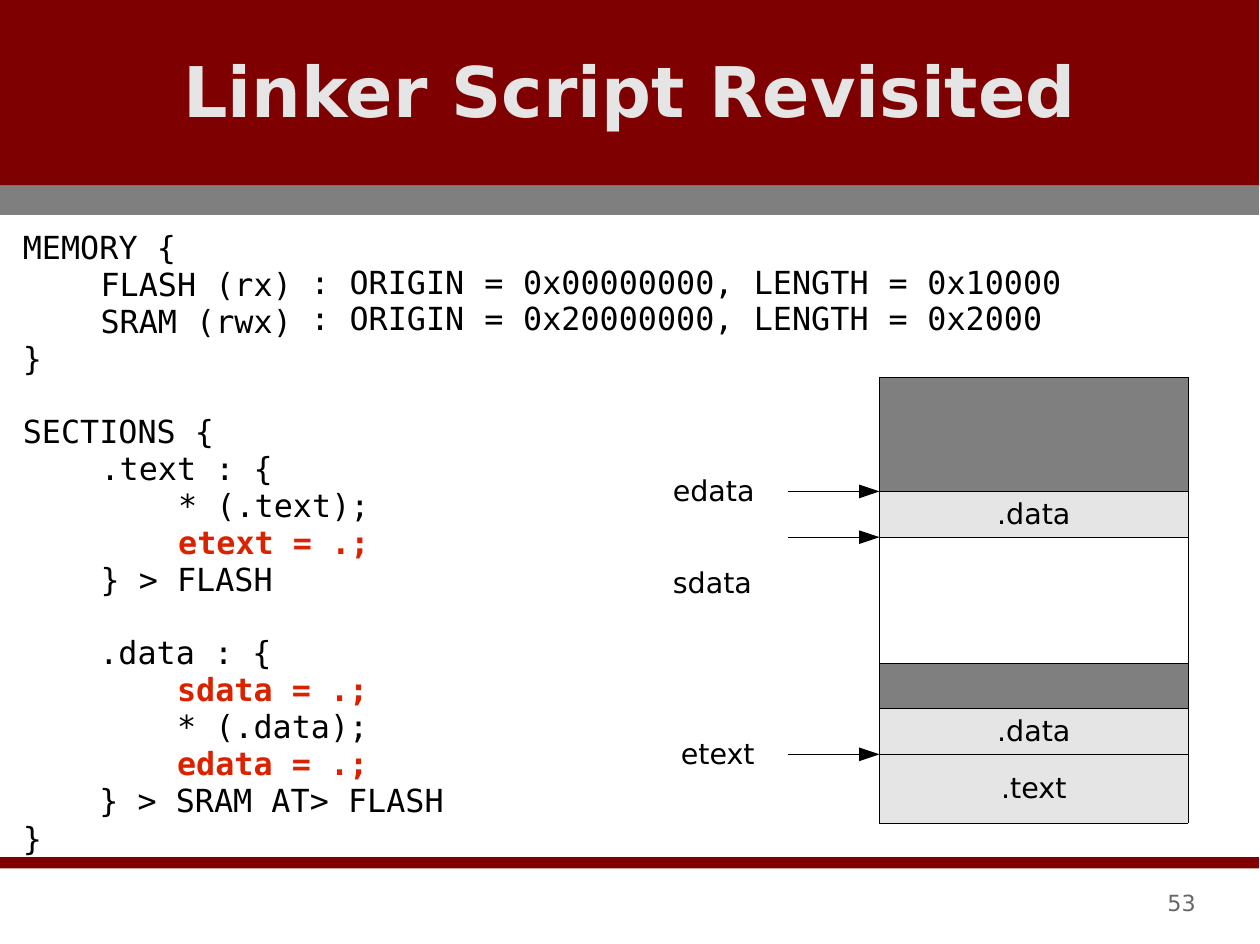
from lxml import etree
from pptx import Presentation
from pptx.dml.color import RGBColor
from pptx.enum.shapes import MSO_CONNECTOR, MSO_SHAPE
from pptx.enum.text import MSO_ANCHOR, PP_ALIGN
from pptx.oxml.ns import qn
from pptx.util import Pt

RECTANGLE = MSO_SHAPE.RECTANGLE
STRAIGHT = MSO_CONNECTOR.STRAIGHT
TOP, MIDDLE = MSO_ANCHOR.TOP, MSO_ANCHOR.MIDDLE
LEFT, CENTER = PP_ALIGN.LEFT, PP_ALIGN.CENTER

EMU_PER_PX = 9144  # 100 px to the inch
MAROON = RGBColor(0x7F, 0x00, 0x00)
GRAY = RGBColor(0x7F, 0x7F, 0x7F)
LIGHT = RGBColor(0xE5, 0xE5, 0xE5)
BLACK = RGBColor(0x00, 0x00, 0x00)
RED = RGBColor(0xDB, 0x22, 0x00)
DIM = RGBColor(0x66, 0x66, 0x66)

TITLE = dict(name="DejaVu Sans", size=Pt(44), bold=True)
LABEL = dict(name="DejaVu Sans", size=Pt(18), bold=False)
NUMBER = dict(name="DejaVu Sans", size=Pt(14), bold=False)
CODE = dict(name="DejaVu Sans Mono", size=Pt(20), bold=False)
SYMBOL = dict(CODE, bold=True)

HAIRLINE = Pt(0.25)
CODE_PITCH = Pt(23.3)
CODE_INDENT = 68
NO_TABLE_STYLE = "{2D5ABB26-0587-4C30-8999-92F81FD0307C}"

# Each code block: left, top, width, height, lines as (indent level, text)
CODE_BLOCKS = [
    (19, 198, 245, 133, [(0, "MEMORY {"), (1, "FLASH (rx)"),
                         (1, "SRAM (rwx)"), (0, "}")]),
    (19, 359, 320, 165, [(0, "SECTIONS {"), (1, ".text : {"),
                         (2, "* (.text);"), (2, "etext = .;"),
                         (1, "} > FLASH")]),
    (86, 553, 320, 165, [(0, ".data : {"), (1, "sdata = .;"),
                         (1, "* (.data);"), (1, "edata = .;"),
                         (0, "} > SRAM AT> FLASH")]),
    (19, 715, 20, 36, [(0, "}")]),
]
SYMBOL_LINES = {"etext = .;", "sdata = .;", "edata = .;"}

REGION_COLUMNS = [29, 118, 34, 202, 118, 34, 130]
REGIONS = [(":", "ORIGIN", "=", origin, "LENGTH", "=", length)
           for origin, length in [("0x00000000,", "0x10000"),
                                  ("0x20000000,", "0x2000")]]

# Memory map rows: height, text, fill
MEMORY_MAP = [
    (100, "", GRAY),
    (40, ".data", LIGHT),
    (110, "", None),
    (40, "", GRAY),
    (40, ".data", LIGHT),
    (60, ".text", LIGHT),
]
MAP_LEFT, MAP_TOP, MAP_WIDTH = 770, 330, 270


def px(*lengths):
    return [n * EMU_PER_PX for n in lengths]


class Deck:
    def __init__(self, width, height):
        self.prs = Presentation()
        self.prs.slide_width, self.prs.slide_height = px(width, height)
        self.s = self.prs.slides.add_slide(self.prs.slide_layouts[5])

    def frame(self, tf, wrap=True, top=2):
        tf.word_wrap = wrap
        tf.vertical_anchor = TOP
        tf.margin_left = tf.margin_right = tf.margin_bottom = 0
        tf.margin_top, = px(top)

    def add_run(self, p, text, style, color, align=LEFT, spacing=None):
        p.alignment = align
        p.line_spacing = spacing
        r = p.add_run()
        r.text = text
        for name, value in style.items():
            setattr(r.font, name, value)
        r.font.color.rgb = color

    def band(self, top, height, color):
        sp = self.s.shapes.add_shape(RECTANGLE, *px(0, top, 1102, height))
        sp.shadow.inherit = False
        sp.fill.solid()
        sp.fill.fore_color.rgb = color
        sp.line.fill.background()

    def title(self, text, *box):
        sp = self.s.shapes.title
        sp.left, sp.top, sp.width, sp.height = px(*box)
        self.frame(sp.text_frame, wrap=False)
        self.add_run(sp.text_frame.paragraphs[0], text, TITLE, LIGHT, CENTER)

    def text(self, text, box, style=LABEL, color=BLACK):
        tf = self.s.shapes.add_textbox(*px(*box)).text_frame
        self.frame(tf)
        self.add_run(tf.paragraphs[0], text, style, color)

    def code(self, box, lines):
        tf = self.s.shapes.add_textbox(*px(*box)).text_frame
        self.frame(tf)
        for i, (level, line) in enumerate(lines):
            p = tf.add_paragraph() if i else tf.paragraphs[0]
            margin, = px(1 + level * CODE_INDENT)
            p._p.get_or_add_pPr().set("marL", str(margin))
            style, color = (SYMBOL, RED) if line in SYMBOL_LINES else (CODE, BLACK)
            self.add_run(p, line, style, color, spacing=CODE_PITCH)

    def table(self, left, top, widths, heights):
        """Add a plain table with no style and no cell margins."""
        box = px(left, top, sum(widths), sum(heights))
        tbl = self.s.shapes.add_table(len(heights), len(widths), *box).table
        tbl.first_row = tbl.horz_banding = False
        tbl._tbl.tblPr.find(qn("a:tableStyleId")).text = NO_TABLE_STYLE
        for column, width in zip(tbl.columns, px(*widths)):
            column.width = width
        for row, height in zip(tbl.rows, px(*heights)):
            row.height = height
        for cell in tbl.iter_cells():
            cell.margin_left = cell.margin_right = 0
            cell.margin_top = cell.margin_bottom = 0
            cell.fill.background()
        return tbl

    def regions(self, left, top):
        tbl = self.table(left, top, REGION_COLUMNS, [32] * len(REGIONS))
        for row, words in zip(tbl.rows, REGIONS):
            for i, (cell, word) in enumerate(zip(row.cells, words)):
                cell.margin_left, = px(8 if i else 3)
                self.add_run(cell.text_frame.paragraphs[0], word, CODE, BLACK,
                             spacing=Pt(22.2))

    def border(self, cell):
        tcPr = cell._tc.get_or_add_tcPr()
        for i, side in enumerate(("a:lnL", "a:lnR", "a:lnT", "a:lnB")):
            ln = etree.Element(qn(side), w=str(HAIRLINE))
            fill = etree.SubElement(ln, qn("a:solidFill"))
            etree.SubElement(fill, qn("a:srgbClr"), val=str(BLACK))
            tcPr.insert(i, ln)

    def memory_map(self):
        heights = [height for height, _, _ in MEMORY_MAP]
        tbl = self.table(MAP_LEFT, MAP_TOP, [MAP_WIDTH], heights)
        for cell, (_, text, color) in zip(tbl.iter_cells(), MEMORY_MAP):
            self.border(cell)
            cell.vertical_anchor = MIDDLE
            if color is not None:
                cell.fill.solid()
                cell.fill.fore_color.rgb = color
            if text:
                self.add_run(cell.text_frame.paragraphs[0], text, LABEL, BLACK, CENTER)

    def arrow(self, y):
        """Point at the left edge of the memory map at height y."""
        tip, back = MAP_LEFT, MAP_LEFT - 18
        line = self.s.shapes.add_connector(STRAIGHT, *px(690, y, back + 4, y))
        line.line.width = HAIRLINE
        line.line.color.rgb = BLACK
        etree.SubElement(line._element.spPr, qn("a:effectLst"))
        outline = self.s.shapes.build_freeform(*px(back, y - 6))
        outline.add_line_segments([px(back, y + 6), px(tip, y)], close=True)
        head = outline.convert_to_shape()
        head.shadow.inherit = False
        head.fill.solid()
        head.fill.fore_color.rgb = BLACK
        head.line.fill.background()


def main():
    deck = Deck(1103, 826)
    for top, height, color in [(162, 26, GRAY), (0, 162, MAROON), (750, 10, MAROON)]:
        deck.band(top, height, color)
    deck.title("Linker Script Revisited", 158, 40, 787, 76)
    deck.memory_map()
    for *box, lines in CODE_BLOCKS:
        deck.code(box, lines)
    deck.regions(269, 233)
    for y in (430, 470, 660):
        deck.arrow(y)
    for name, left, top in [("edata", 589, 412), ("sdata", 589, 492), ("etext", 596, 642)]:
        deck.text(name, (left, top, 80, 33))
    deck.text("53", (1022, 776, 30, 25), NUMBER, DIM)
    # The title is drawn above the bands.
    deck.s.shapes._spTree.append(deck.s.shapes.title._element)
    deck.prs.save("out.pptx")


if __name__ == "__main__":
    main()
